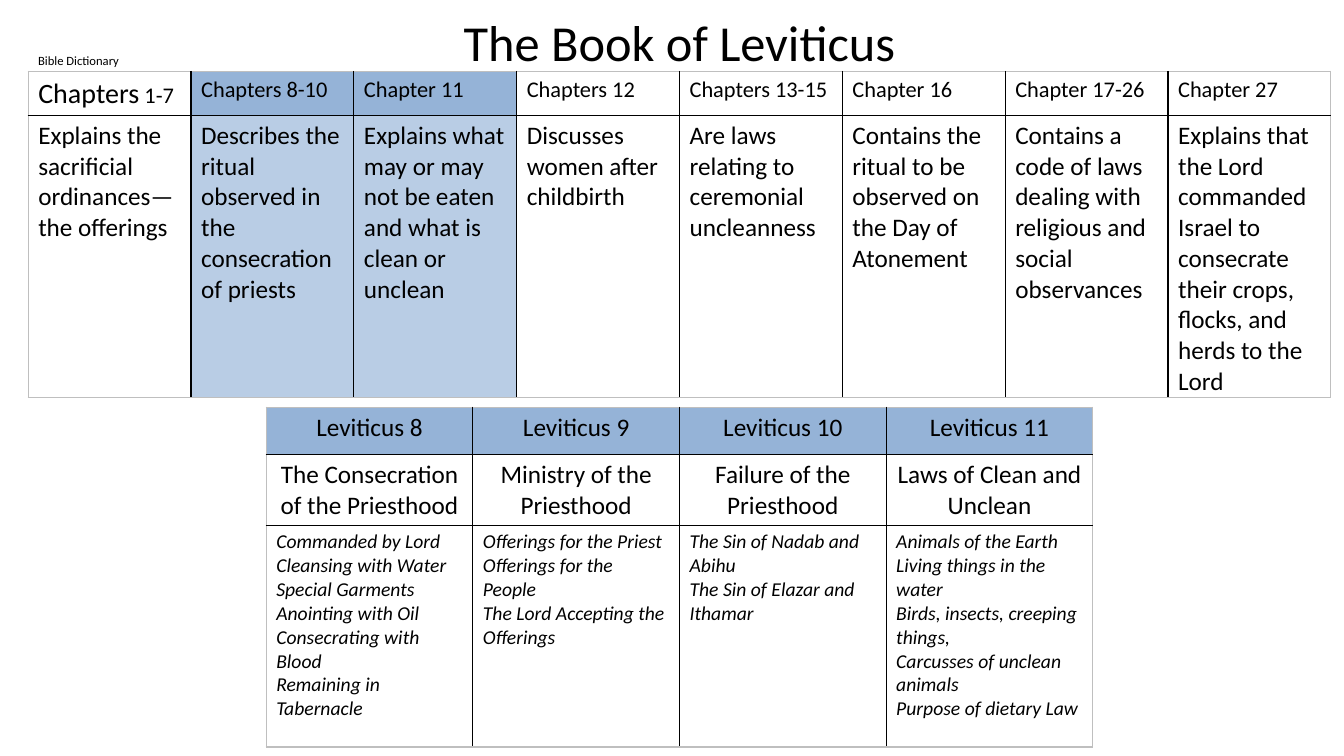
from dataclasses import dataclass

import pptx
import pptx.dml.color
import pptx.enum.text
import pptx.oxml
import pptx.oxml.ns
import pptx.util

Inches = pptx.util.Inches
ALIGN = pptx.enum.text.PP_ALIGN


@dataclass(frozen=True)
class Theme:
    font: str = "Calibri"
    text: str = "000000"
    white: str = "FFFFFF"
    header: str = "95B3D7"
    highlight: str = "B9CDE5"
    grid: str = "000000"
    frame: str = "BFBFBF"
    title: int = 36
    lead: int = 20
    body: int = 18
    label: int = 16
    detail: int = 14
    caption: int = 9


@dataclass(frozen=True)
class Row:
    height: float
    size: int
    texts: list[str]
    fills: list[str | None]
    centred: bool = False
    italic: bool = False


@dataclass(frozen=True)
class Grid:
    left: float
    top: float
    width: float
    rows: list[Row]


THEME = Theme()

# Content of the two tables
CHAPTERS = Grid(0.28, 0.71, 12.92, [
    Row(0.43, THEME.label,
        ["Chapters 1-7", "Chapters 8-10", "Chapter 11", "Chapters 12",
         "Chapters 13-15", "Chapter 16", "Chapter 17-26", "Chapter 27"],
        [THEME.white] + [THEME.header] * 2 + [None] * 5),
    Row(2.8, THEME.body,
        ["Explains the sacrificial ordinances—the offerings",
         "Describes the ritual observed in the consecration of priests",
         "Explains what may or may not be eaten and what is clean or unclean",
         "Discusses women after childbirth",
         "Are laws relating to ceremonial uncleanness",
         "Contains the ritual to be observed on the Day of Atonement",
         "Contains a code of laws dealing with religious and social observances",
         "Explains that the Lord commanded Israel to consecrate their crops, "
         "flocks, and herds to the Lord"],
        [THEME.white] + [THEME.highlight] * 2 + [None] * 5),
])
LESSONS = Grid(2.64, 4.04, 8.2, [
    Row(0.47, THEME.body,
        ["Leviticus 8", "Leviticus 9", "Leviticus 10", "Leviticus 11"],
        [THEME.header] * 4, centred=True),
    Row(0.7, THEME.body,
        ["The Consecration of the Priesthood", "Ministry of the Priesthood",
         "Failure of the Priesthood", "Laws of Clean and Unclean"],
        [None] * 4, centred=True),
    Row(2.2, THEME.detail,
        ["Commanded by Lord\nCleansing with Water\nSpecial Garments\n"
         "Anointing with Oil\nConsecrating with Blood\nRemaining in Tabernacle",
         "Offerings for the Priest\nOfferings for the People\n"
         "The Lord Accepting the Offerings",
         "The Sin of Nadab and Abihu\nThe Sin of Elazar and Ithamar",
         "Animals of the Earth\nLiving things in the water\n"
         "Birds, insects, creeping things,\nCarcusses of unclean animals\n"
         "Purpose of dietary Law"],
        [None] * 4, italic=True),
])


def rgb(value: str) -> pptx.dml.color.RGBColor:
    return pptx.dml.color.RGBColor.from_string(value)


def write(tf, text: str, *, size: int, align=ALIGN.LEFT,
          italic: bool = False) -> None:
    """Fill a text frame, one paragraph per line of text."""
    tf.word_wrap = True
    for i, line in enumerate(text.split("\n")):
        p = tf.paragraphs[0] if i == 0 else tf.add_paragraph()
        p.alignment = align
        add_run(p, line, size=size, italic=italic)


def add_run(p, text: str, *, size: int, italic: bool = False) -> None:
    r = p.add_run()
    r.text = text
    r.font.name = THEME.font
    r.font.size = pptx.util.Pt(size)
    r.font.bold = False
    r.font.italic = italic
    r.font.color.rgb = rgb(THEME.text)


def add_border(cell, side: str, color: str) -> None:
    ns = pptx.oxml.ns.nsdecls("a")
    cell._tc.get_or_add_tcPr().append(pptx.oxml.parse_xml(
        f'<a:ln{side} {ns} w="12700"><a:solidFill><a:srgbClr val="{color}"/>'
        f'</a:solidFill></a:ln{side}>'))


def add_grid(s, grid: Grid):
    n_rows, n_cols = len(grid.rows), len(grid.rows[0].texts)
    height = sum(row.height for row in grid.rows)
    table = s.shapes.add_table(
        n_rows, n_cols, Inches(grid.left), Inches(grid.top),
        Inches(grid.width), Inches(height)).table
    table.first_row = table.horz_banding = False
    for column in table.columns:
        column.width = Inches(grid.width / n_cols)
    for i, row in enumerate(grid.rows):
        table.rows[i].height = Inches(row.height)
        for j, (text, fill) in enumerate(zip(row.texts, row.fills)):
            cell = table.cell(i, j)
            write(cell.text_frame, text, size=row.size, italic=row.italic,
                  align=ALIGN.CENTER if row.centred else ALIGN.LEFT)
            outer = {"L": j == 0, "R": j == n_cols - 1,
                     "T": i == 0, "B": i == n_rows - 1}
            for side, on_frame in outer.items():
                add_border(cell, side, THEME.frame if on_frame else THEME.grid)
            if fill:
                cell.fill.solid()
                cell.fill.fore_color.rgb = rgb(fill)
            else:
                cell.fill.background()
    return table


def main() -> None:
    prs = pptx.Presentation()
    prs.slide_width, prs.slide_height = Inches(13.33), Inches(7.5)
    s = prs.slides.add_slide(prs.slide_layouts[5])

    # Title
    sp = s.shapes.title
    sp.left, sp.top = Inches(0.28), Inches(0.06)
    sp.width, sp.height = Inches(12.92), Inches(0.71)
    tf = sp.text_frame
    tf.auto_size = pptx.enum.text.MSO_AUTO_SIZE.NONE
    tf.vertical_anchor = pptx.enum.text.MSO_ANCHOR.TOP
    write(tf, "The Book of Leviticus", size=THEME.title, align=ALIGN.CENTER)

    # Caption above the first table
    sp = s.shapes.add_textbox(Inches(0.28), Inches(0.48),
                              Inches(1.64), Inches(0.25))
    write(sp.text_frame, "Bible Dictionary", size=THEME.caption)

    # Tables; the first heading has a larger opening word
    chapters = add_grid(s, CHAPTERS)
    p = chapters.cell(0, 0).text_frame.paragraphs[0]
    p.runs[0].text = "Chapters"
    p.runs[0].font.size = pptx.util.Pt(THEME.lead)
    add_run(p, " 1-7", size=THEME.label)
    add_grid(s, LESSONS)

    prs.save("out.pptx")


if __name__ == "__main__":
    main()
